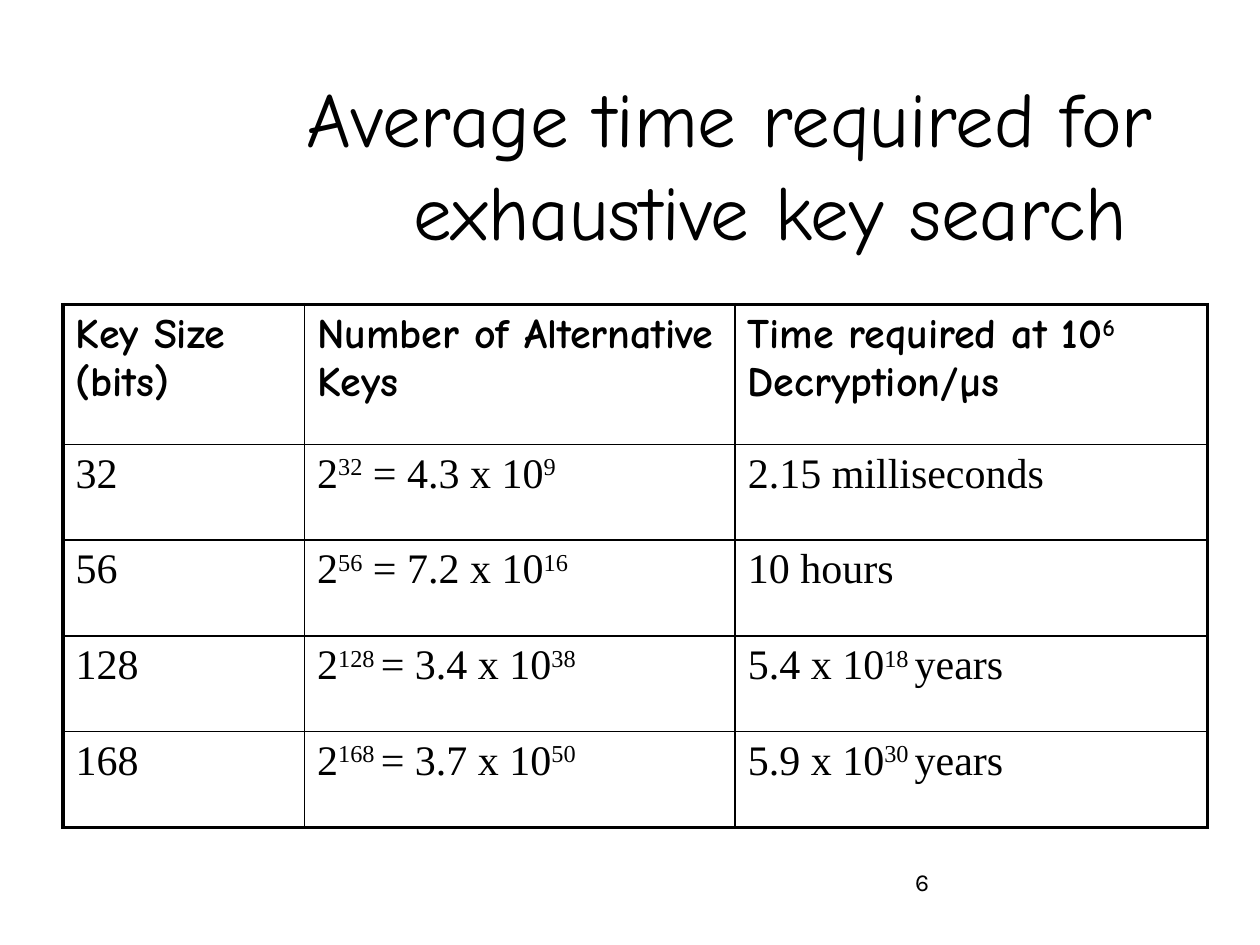
from lxml import etree
from pptx import Presentation
from pptx.dml.color import RGBColor
from pptx.enum.text import MSO_ANCHOR, PP_ALIGN
from pptx.oxml.ns import qn
from pptx.util import Cm, Pt

MIDDLE, TOP = MSO_ANCHOR.MIDDLE, MSO_ANCHOR.TOP
LEFT, RIGHT = PP_ALIGN.LEFT, PP_ALIGN.RIGHT

ROWS = [
    ["Key Size (bits)", "Number of Alternative Keys", "Time required at 10^6^ Decryption/µs"],
    ["32", "2^32^ = 4.3 x 10^9", "2.15 milliseconds"],
    ["56", "2^56^ = 7.2 x 10^16", "10 hours"],
    ["128", "2^128 ^= 3.4 x 10^38", "5.4 x 10^18 ^years"],
    ["168", "2^168 ^= 3.7 x 10^50", "5.9 x 10^30 ^years"],
]


def color(value):
    return RGBColor.from_string(value)


def write(tf, text, font, size, bold=False, fill="000000", align=LEFT):
    p = tf.paragraphs[0]
    p.alignment = align
    for i, part in enumerate(text.split("^")):
        if not part:
            continue
        r = p.add_run()
        r.text = part
        r.font.name = font
        r.font.size = Pt(size)
        r.font.bold = bold
        r.font.color.rgb = color(fill)
        if i % 2:
            r.font._element.set("baseline", "30000")


class Deck:
    heading, body, number = "Comic Neue", "Times New Roman", "Karla"
    ink, thin, thick = "000000", 1, 2.25

    def __init__(self, width, height):
        self.prs = Presentation()
        self.prs.slide_width, self.prs.slide_height = Cm(width), Cm(height)
        self.s = self.prs.slides.add_slide(self.prs.slide_layouts[6])

    def text(self, text, x, y, w, h, anchor=TOP, **style):
        sp = self.s.shapes.add_textbox(Cm(x), Cm(y), Cm(w), Cm(h))
        tf = sp.text_frame
        tf.word_wrap = True
        tf.vertical_anchor = anchor
        write(tf, text, fill=self.ink, **style)

    def borders(self, cell, outer):
        tc_pr = cell._tc.get_or_add_tcPr()
        for i, side in enumerate("LRTB"):
            width = self.thick if side in outer else self.thin
            ln = etree.Element(qn(f"a:ln{side}"), w=str(int(Pt(width))))
            fill = etree.SubElement(ln, qn("a:solidFill"))
            etree.SubElement(fill, qn("a:srgbClr"), val=self.ink)
            tc_pr.insert(i, ln)

    def table(self, rows, x, y, widths, heights, size):
        last_row, last_col = len(rows) - 1, len(widths) - 1
        frame = self.s.shapes.add_table(len(rows), len(widths), Cm(x), Cm(y),
                                        Cm(sum(widths)), Cm(sum(heights)))
        table = frame.table
        table.first_row = table.horz_banding = False
        for col, width in zip(table.columns, widths):
            col.width = Cm(width)
        for row, height in zip(table.rows, heights):
            row.height = Cm(height)
        for i, row in enumerate(rows):
            for j, text in enumerate(row):
                cell = table.cell(i, j)
                cell.fill.background()
                edges = {"L": j == 0, "R": j == last_col, "T": i == 0, "B": i == last_row}
                self.borders(cell, [side for side, on in edges.items() if on])
                write(cell.text_frame, text, self.body if i else self.heading, size,
                      bold=i == 0, fill=self.ink)

    def save(self):
        self.prs.save("out.pptx")


def main():
    deck = Deck(25.4, 19.05)
    deck.text("6", 18.2, 17.35, 5.3, 1.27, font=deck.number, size=14)
    deck.text("Average time required for exhaustive key search ", 3.39, 1.7, 20.1, 3.18,
              anchor=MIDDLE, font=deck.heading, size=44, align=RIGHT)
    deck.table(ROWS, 1.27, 6.14, [4.87, 8.68, 9.52], [2.82] + [1.93] * 4, size=24)
    deck.save()


if __name__ == "__main__":
    main()
